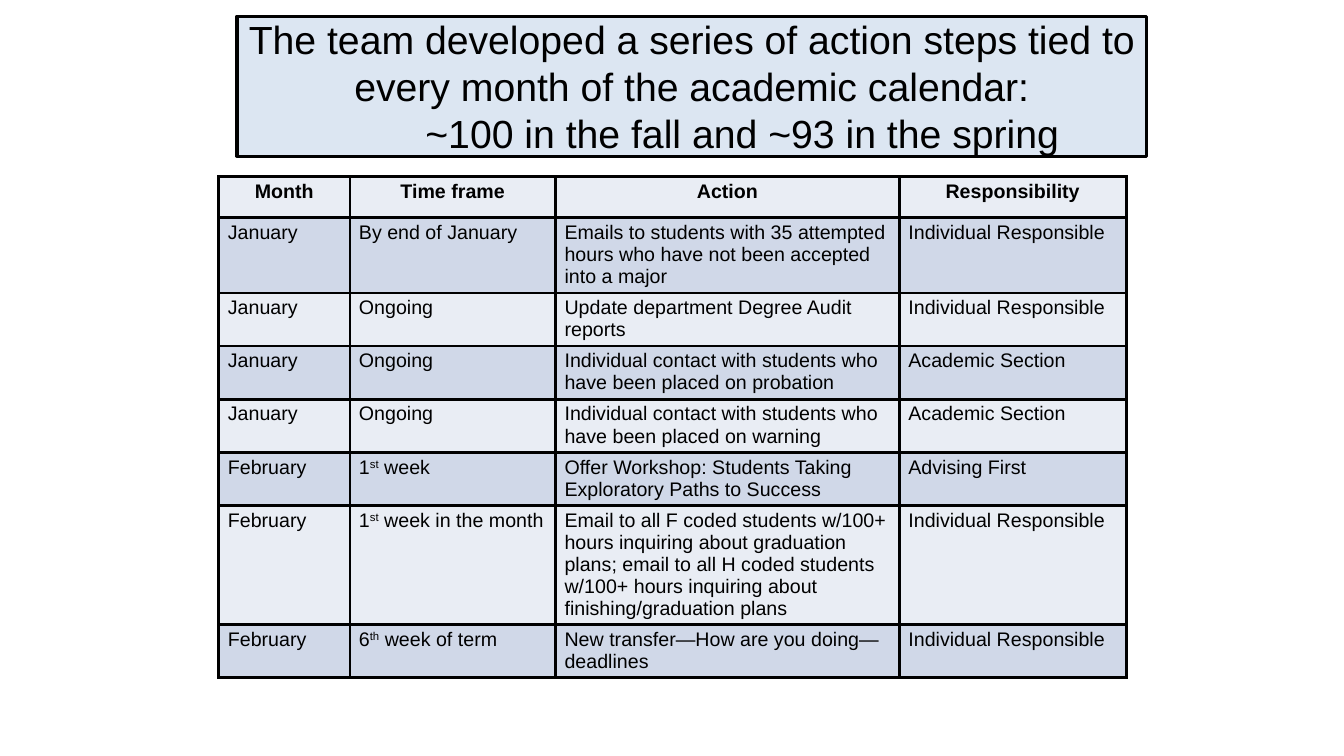
import pptx
import pptx.util
import pptx.dml.color
import pptx.enum.shapes
import pptx.enum.text
import pptx.oxml
import pptx.oxml.ns

Inches, Pt = pptx.util.Inches, pptx.util.Pt
RGB = pptx.dml.color.RGBColor.from_string
ALIGN = pptx.enum.text.PP_ALIGN

THEME = {
    "ink": "000000",
    "title_fill": "DCE6F2",
    "bands": ["E9EDF4", "D0D8E8"],
    "font": "Arial",
    "title_size": 28,
    "table_size": 14,
    "line": 2.25,
}


def format_run(r, size, bold=False):
    values = {"name": THEME["font"], "size": Pt(size), "bold": bold}
    for name, value in values.items():
        setattr(r.font, name, value)
    r.font.color.rgb = RGB(THEME["ink"])


def add_borders(cell):
    """Draw a solid line on all four sides; call before the cell's fill is set."""
    tcPr = cell._tc.get_or_add_tcPr()
    for side in ("lnL", "lnR", "lnT", "lnB"):
        tcPr.append(pptx.oxml.parse_xml(
            f'<a:{side} {pptx.oxml.ns.nsdecls("a")} w="{Pt(THEME["line"])}">'
            f'<a:solidFill><a:srgbClr val="{THEME["ink"]}"/></a:solidFill></a:{side}>'))


prs = pptx.Presentation()
prs.slide_width, prs.slide_height = Inches(13.33), Inches(7.5)
s = prs.slides.add_slide(prs.slide_layouts[6])

# Title box: the last line is centred within an indent
sp = s.shapes.add_shape(pptx.enum.shapes.MSO_SHAPE.RECTANGLE,
                        Inches(2.35), Inches(0.16), Inches(9.02), Inches(1.39))
sp.shadow.inherit = False
sp.fill.solid()
sp.fill.fore_color.rgb = RGB(THEME["title_fill"])
sp.line.color.rgb = RGB(THEME["ink"])
sp.line.width = Pt(THEME["line"])
tf = sp.text_frame
tf.word_wrap = True
tf.vertical_anchor = pptx.enum.text.MSO_ANCHOR.MIDDLE
title_lines = [
    ("The team developed a series of action steps tied to every month "
     "of the academic calendar:", 0),
    ("~100 in the fall and ~93 in the spring", 1),
]
for i, (text, indent) in enumerate(title_lines):
    p = tf.add_paragraph() if i else tf.paragraphs[0]
    p.alignment = ALIGN.CENTER
    p._p.get_or_add_pPr().set("marL", str(Inches(indent)))
    r = p.add_run()
    r.text = text
    format_run(r, THEME["title_size"])

# Action steps; text between carets is superscript
rows = [
    ("Month", "Time frame", "Action", "Responsibility"),
    ("January", "By end of January",
     "Emails to students with 35 attempted hours who have not been accepted into a major",
     "Individual Responsible"),
    ("January", "Ongoing", "Update department Degree Audit reports",
     "Individual Responsible"),
    ("January", "Ongoing",
     "Individual contact with students who have been placed on probation",
     "Academic Section"),
    ("January", "Ongoing",
     "Individual contact with students who have been placed on warning",
     "Academic Section"),
    ("February", "1^st^ week",
     "Offer Workshop: Students Taking Exploratory Paths to Success",
     "Advising First"),
    ("February", "1^st^ week in the month",
     "Email to all F coded students w/100+ hours inquiring about graduation plans; "
     "email to all H coded students w/100+ hours inquiring about "
     "finishing/graduation plans",
     "Individual Responsible"),
    ("February", "6^th^ week of term", "New transfer—How are you doing— deadlines",
     "Individual Responsible"),
]
col_widths = [1.3, 2.04, 3.41, 2.25]
row_height = 0.41
table = s.shapes.add_table(len(rows), len(col_widths), Inches(2.17), Inches(1.75),
                           Inches(sum(col_widths)),
                           Inches(row_height * len(rows))).table
for column, width in zip(table.columns, col_widths):
    column.width = Inches(width)

margins = {"margin_left": 0.09, "margin_right": 0.09,
           "margin_top": 0.04, "margin_bottom": 0.05}
for i, row in enumerate(rows):
    is_header = i == 0
    for j, text in enumerate(row):
        cell = table.cell(i, j)
        add_borders(cell)
        cell.fill.solid()
        cell.fill.fore_color.rgb = RGB(THEME["bands"][i % 2])
        for name, value in margins.items():
            setattr(cell, name, Inches(value))
        p = cell.text_frame.paragraphs[0]
        p.alignment = ALIGN.CENTER if is_header else ALIGN.LEFT
        for k, part in enumerate(text.split("^")):
            r = p.add_run()
            r.text = part
            format_run(r, THEME["table_size"], bold=is_header)
            if k % 2:
                r._r.get_or_add_rPr().set("baseline", "30000")

prs.save("out.pptx")
